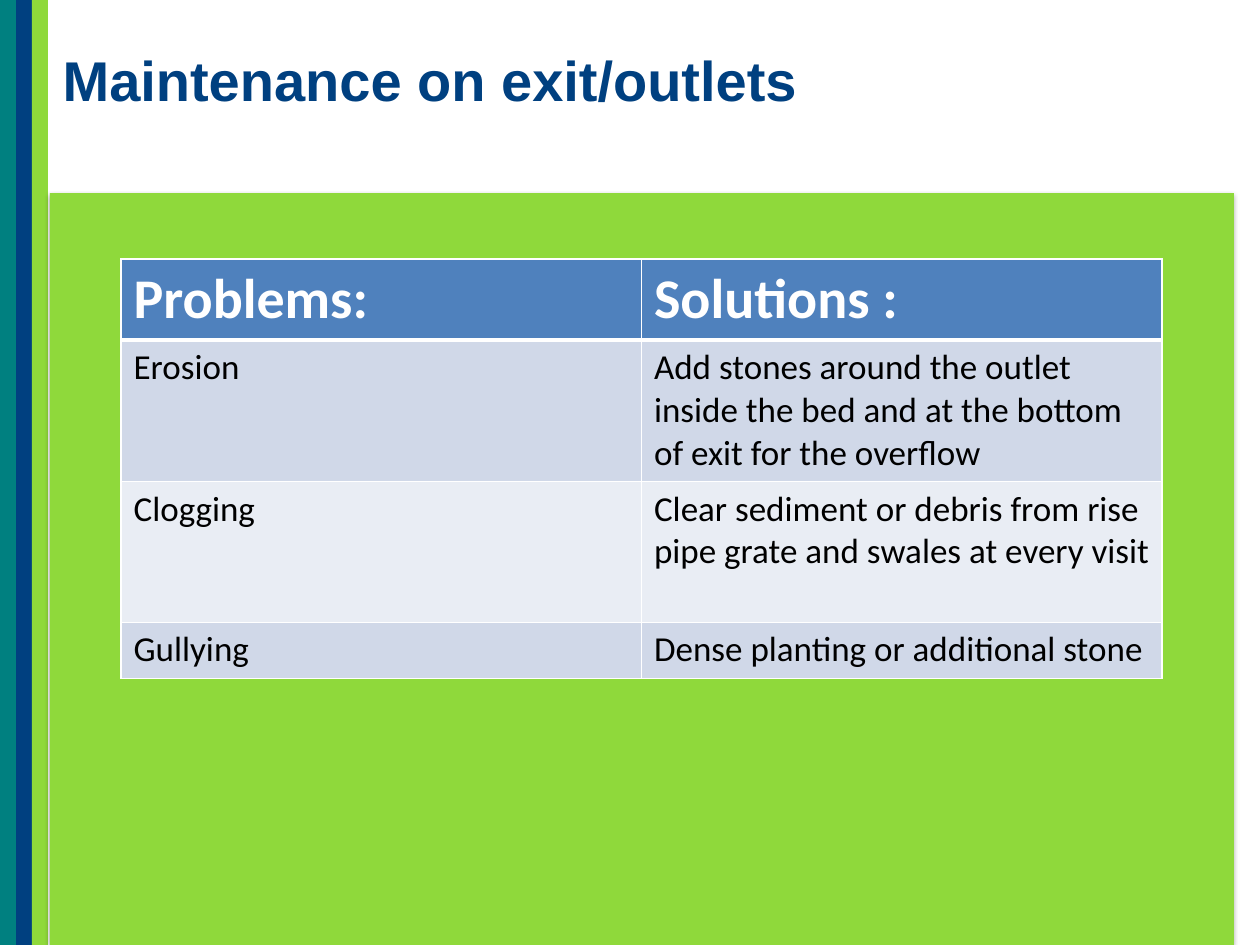
from typing import NamedTuple

from lxml import etree
from pptx import Presentation, util as u
from pptx.dml.color import RGBColor
from pptx.enum import shapes, text
from pptx.oxml import parse_xml
from pptx.oxml.ns import nsdecls, qn

SCALE = 914400 / 126
WHITE = RGBColor(0xFF, 0xFF, 0xFF)
BLACK = RGBColor(0, 0, 0)
LIME = RGBColor(0x8F, 0xD9, 0x3B)
NAVY = RGBColor(0, 0x40, 0x80)
TEAL = RGBColor(0, 0x80, 0x80)
HEAD = RGBColor(0x4F, 0x81, 0xBD)
BANDS = RGBColor(0xD0, 0xD8, 0xE8), RGBColor(0xE9, 0xED, 0xF4)


class Box(NamedTuple):
    left: int
    top: int
    width: int
    height: int


class Style(NamedTuple):
    size: int
    color: RGBColor
    bold: bool
    name: str = "Calibri"


PANEL = Box(50, 193, 1184, 752)
TITLE = Box(50, 33, 1210, 159)
GRID = Box(121, 259, 1041, 418)
HEIGHTS = 80, 141, 141, 56
ROWS = (
    ("Problems:", "Solutions :"),
    ("Erosion", "Add stones around the outlet inside the bed and at the bottom "
                "of exit for the overflow"),
    ("Clogging", "Clear sediment or debris from rise pipe grate and swales at "
                 "every visit"),
    ("Gullying", "Dense planting or additional stone"),
)


def px(num: float) -> u.Emu:
    return u.Emu(round(num * SCALE))


def place(box: Box) -> list[u.Emu]:
    return [px(num) for num in box]


def style(font, look: Style) -> None:
    for key, val in {"size": u.Pt(look.size), "bold": look.bold,
                     "name": look.name}.items():
        setattr(font, key, val)
    font.color.rgb = look.color


def draw_rect(slide, box: Box, color: RGBColor):
    rect = slide.shapes.add_shape(shapes.MSO_SHAPE.RECTANGLE, *place(box))
    rect.shadow.inherit = False
    rect.fill.solid()
    rect.fill.fore_color.rgb = color
    rect.line.fill.background()
    return rect


def add_shadow(shape) -> None:
    effects = shape._element.spPr.find(qn("a:effectLst"))
    effects.append(parse_xml(
        f'<a:outerShdw {nsdecls("a")} blurRad="40000" dist="23000" '
        'dir="5400000" rotWithShape="0"><a:srgbClr val="000000">'
        '<a:alpha val="35000"/></a:srgbClr></a:outerShdw>'))


def set_edges(cell, **widths: int) -> None:
    """Draw white cell borders, widths in points, keyed L, R, T and B."""
    props = cell._tc.get_or_add_tcPr()
    for pos, (side, width) in enumerate(widths.items()):
        line = etree.Element(qn(f"a:ln{side}"), w=str(u.Pt(width)))
        fill = etree.SubElement(line, qn("a:solidFill"))
        etree.SubElement(fill, qn("a:srgbClr"), val=str(WHITE))
        props.insert(pos, line)


def draw_title(slide) -> None:
    title = slide.shapes.title
    title.left, title.top, title.width, title.height = place(TITLE)
    frame = title.text_frame
    for key, val in {"text": "Maintenance on exit/outlets", "word_wrap": True,
                     "auto_size": text.MSO_AUTO_SIZE.NONE,
                     "vertical_anchor": text.MSO_ANCHOR.TOP,
                     "margin_top": px(13)}.items():
        setattr(frame, key, val)
    para = frame.paragraphs[0]
    para.alignment = text.PP_ALIGN.LEFT
    style(para.runs[0].font, Style(32, NAVY, True, "Arial"))


def draw_table(slide) -> None:
    table = slide.shapes.add_table(len(ROWS), len(ROWS[0]),
                                   *place(GRID)).table
    for col in table.columns:
        col.width = px(GRID.width / len(ROWS[0]))
    for row, (words, height) in enumerate(zip(ROWS, HEIGHTS)):
        table.rows[row].height = px(height)
        look = Style(20, BLACK, False) if row else Style(32, WHITE, True)
        for col, word in enumerate(words):
            cell = table.cell(row, col)
            cell.text = word
            style(cell.text_frame.paragraphs[0].runs[0].font, look)
            cell.fill.solid()
            cell.fill.fore_color.rgb = BANDS[(row - 1) % 2] if row else HEAD
            set_edges(cell, L=1, R=1, T=3 if row == 1 else 1,
                      B=1 if row else 3)


def main() -> None:
    deck = Presentation()
    deck.slide_width, deck.slide_height = u.Inches(10), u.Inches(7.5)
    slide = deck.slides.add_slide(deck.slide_layouts[5])
    for pos, color in enumerate((TEAL, NAVY, LIME)):
        draw_rect(slide, Box(16 * pos, 0, 16, 945), color)
    add_shadow(draw_rect(slide, PANEL, LIME))
    draw_title(slide)
    draw_table(slide)
    deck.save("out.pptx")


if __name__ == "__main__":
    main()
